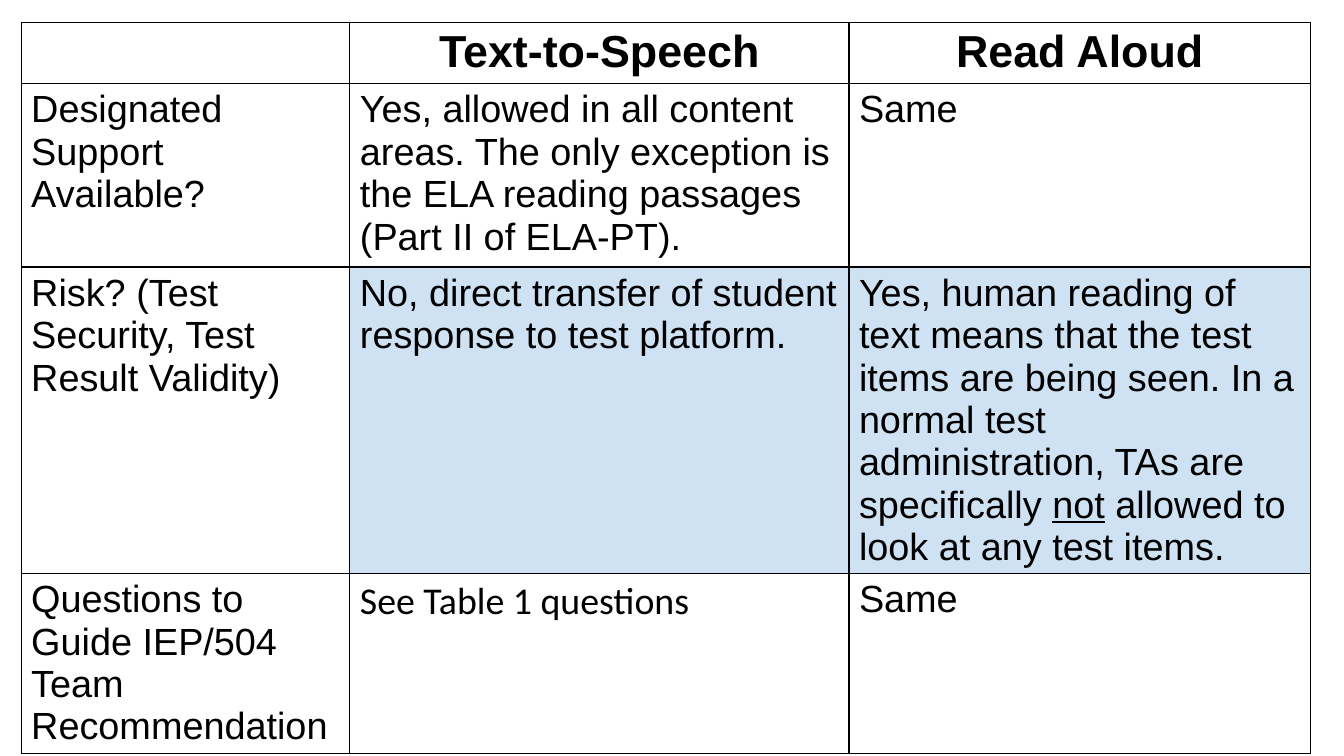
from lxml import etree
from pptx import Presentation
from pptx import util as u
from pptx.dml.color import RGBColor
from pptx.enum import text
from pptx.oxml import ns

PX = u.Inches(1) // 100
BLACK = RGBColor(0x00, 0x00, 0x00)
PALE_BLUE = RGBColor(0xCF, 0xE2, 0xF3)

COLUMN_WIDTHS = [326, 495, 458]
ROW_HEIGHTS = [61, 182, 268, 165]
COMPARISON = [
    ["", "Text-to-Speech", "Read Aloud"],
    ["Designated Support Available?",
     "Yes, allowed in all content areas. The only exception is the ELA reading "
     "passages (Part II of ELA-PT).",
     "Same"],
    ["Risk? (Test Security, Test Result Validity)",
     "No, direct transfer of student response to test platform.",
     "Yes, human reading of text means that the test items are being seen. In a "
     "normal test administration, TAs are specifically _not_ allowed to look at "
     "any test items."],
    ["Questions to Guide IEP/504 Team Recommendation",
     "See Table 1 questions",
     "Same"],
]
HIGHLIGHTED = {(2, 1), (2, 2)}
CALIBRI_CELLS = {(3, 1)}


def draw_borders(cell):
    """Give a cell a thin black line on all four sides."""
    properties = cell._tc.get_or_add_tcPr()
    for side in ("a:lnL", "a:lnR", "a:lnT", "a:lnB"):
        border = etree.SubElement(properties, ns.qn(side), w=str(u.Pt(1)))
        ink = etree.SubElement(border, ns.qn("a:solidFill"))
        etree.SubElement(ink, ns.qn("a:srgbClr"), val=str(BLACK))


def write_cell(cell, wording, font_name, heading):
    """Write the wording, underlining what stands between underscores."""
    paragraph = cell.text_frame.paragraphs[0]
    paragraph.alignment = text.PP_ALIGN.CENTER if heading else text.PP_ALIGN.LEFT
    for index, piece in enumerate(wording.split("_")):
        if not piece:
            continue
        run = paragraph.add_run()
        run.text = piece
        run.font.name = font_name
        run.font.size = u.Pt(32 if heading else 27)
        run.font.bold = heading
        run.font.underline = index % 2 == 1
        run.font.color.rgb = BLACK


def add_comparison(slide, left, top, width, height):
    """Place the comparison of the two supports in the given box."""
    table = slide.shapes.add_table(
        len(ROW_HEIGHTS), len(COLUMN_WIDTHS),
        left * PX, top * PX, width * PX, height * PX).table
    table.first_row = False
    table.horz_banding = False
    for column, column_width in zip(table.columns, COLUMN_WIDTHS):
        column.width = column_width * PX
    for row, row_height in zip(table.rows, ROW_HEIGHTS):
        row.height = row_height * PX
    for r, wordings in enumerate(COMPARISON):
        for c, wording in enumerate(wordings):
            cell = table.cell(r, c)
            cell.margin_left = cell.margin_right = 10 * PX
            cell.margin_top = cell.margin_bottom = 5 * PX
            draw_borders(cell)
            if (r, c) in HIGHLIGHTED:
                cell.fill.solid()
                cell.fill.fore_color.rgb = PALE_BLUE
            else:
                cell.fill.background()
            font_name = "Calibri" if (r, c) in CALIBRI_CELLS else "Arial"
            write_cell(cell, wording, font_name, heading=r == 0)


def main():
    """Build the slide and save it."""
    presentation = Presentation()
    presentation.slide_width = 1333 * PX
    presentation.slide_height = 750 * PX
    slide = presentation.slides.add_slide(presentation.slide_layouts[6])
    add_comparison(slide, 21, 22, sum(COLUMN_WIDTHS), sum(ROW_HEIGHTS))
    presentation.save("out.pptx")


if __name__ == "__main__":
    main()
